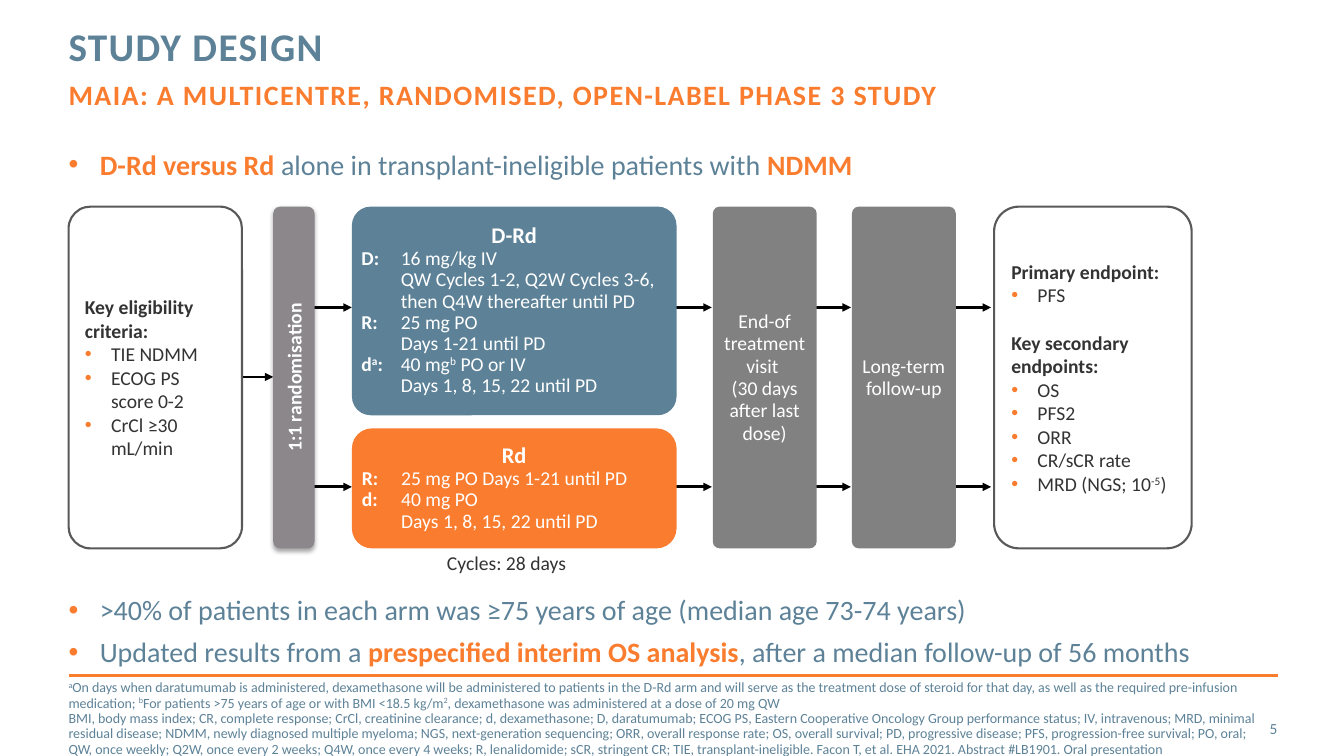
from copy import deepcopy
from lxml.etree import SubElement
from pptx import Presentation
from pptx.dml.color import RGBColor
from pptx.enum.shapes import MSO_CONNECTOR, MSO_SHAPE
from pptx.enum.text import MSO_ANCHOR, PP_ALIGN
from pptx.oxml.ns import qn
from pptx.util import Inches, Pt

ORANGE = RGBColor(0xFA, 0x7C, 0x2E)
BLUE = RGBColor(0x5D, 0x82, 0x98)
GREY = RGBColor(0x81, 0x81, 0x81)
MAUVE = RGBColor(0x8B, 0x87, 0x8B)
EDGE = RGBColor(0x59, 0x59, 0x59)
INK = RGBColor(0x34, 0x33, 0x33)
WHITE = RGBColor(0xFF, 0xFF, 0xFF)
BLACK = RGBColor(0, 0, 0)

LEFT = 0.68
TOP, HIGH = 2.05, 3.39
ARMS = (3.05, 4.83)
CENTER = PP_ALIGN.CENTER


def add_para(frame, runs, size, color, align=None, lead=None, before=0,
             hang=0, bullet=False, track=0):
    para = frame.paragraphs[0]
    if para.runs:
        para = frame.add_paragraph()
    props = para._p.get_or_add_pPr()
    if hang:
        props.set("marL", str(Inches(hang)))
        props.set("indent", str(-Inches(hang)))
    if bullet:
        tint = SubElement(props, qn("a:buClr"))
        SubElement(tint, qn("a:srgbClr")).set("val", str(ORANGE))
        SubElement(props, qn("a:buFont")).set("typeface", "Arial")
        SubElement(props, qn("a:buChar")).set("char", "•")
    para.alignment = align
    para.line_spacing = lead
    para.space_before = Pt(before)
    for text, marks in [(runs, "")] if isinstance(runs, str) else runs:
        for index, line in enumerate(text.split("\n")):
            if index:
                para.add_line_break()
                para._p[-1].insert(0, deepcopy(run._r.rPr))
            run = para.add_run()
            run.text = line
            run.font.name = "Calibri"
            run.font.size = Pt(size)
            run.font.bold = "b" in marks
            run.font.color.rgb = ORANGE if "o" in marks else color
            if "s" in marks:
                run._r.get_or_add_rPr().set("baseline", "30000")
            if track:
                run._r.get_or_add_rPr().set("spc", str(track))


def set_frame(shape, side=0, ends=0, anchor=MSO_ANCHOR.MIDDLE):
    frame = shape.text_frame
    frame.word_wrap = True
    frame.vertical_anchor = anchor
    frame.margin_left = frame.margin_right = Inches(side)
    frame.margin_top = frame.margin_bottom = Inches(ends)
    return frame


def add_label(slide, x, y, w, h, anchor=MSO_ANCHOR.TOP):
    box = slide.shapes.add_textbox(Inches(x), Inches(y), Inches(w), Inches(h))
    return set_frame(box, anchor=anchor)


def add_box(slide, x, y, w, h, fill, curve, edge=None):
    box = slide.shapes.add_shape(MSO_SHAPE.ROUNDED_RECTANGLE, Inches(x),
                                 Inches(y), Inches(w), Inches(h))
    box.adjustments[0] = curve
    box.shadow.inherit = False
    box.fill.solid()
    box.fill.fore_color.rgb = fill
    if edge:
        box.line.color.rgb = edge
        box.line.width = Pt(1.5)
    else:
        box.line.fill.background()
    return box


def add_line(slide, x, y, length, color, arrow=False):
    line = slide.shapes.add_connector(MSO_CONNECTOR.STRAIGHT, Inches(x),
                                      Inches(y), Inches(x + length), Inches(y))
    line.line.color.rgb = color
    line.line.width = Pt(2)
    if arrow:
        SubElement(line.line._ln, qn("a:tailEnd")).set("type", "triangle")
    SubElement(line._element.spPr, qn("a:effectLst"))


def add_header(slide, x, y, w):
    frame = add_label(slide, x, y, w, 0.45)
    add_para(frame, [("STUDY DESIGN", "b")], 28, BLUE, lead=Pt(30), track=100)
    frame = add_label(slide, x, y + 0.5, w, 0.4)
    add_para(frame, [("MAIA: A MULTICENTRE, RANDOMISED, OPEN-LABEL PHASE 3 STUDY", "b")],
             20, ORANGE, track=100)


def add_points(slide, x, y, w, points):
    frame = add_label(slide, x, y, w, 0.36 * len(points))
    for index, runs in enumerate(points):
        add_para(frame, runs, 20, BLUE, before=6 * (index > 0), hang=0.31,
                 bullet=True)


def add_list(slide, x, y, w, h, groups):
    box = add_box(slide, x, y, w, h, WHITE, 0.126, EDGE)
    frame = set_frame(box, 0.1, 0.13)
    for index, (head, items) in enumerate(groups):
        add_para(frame, [(head, "b")], 14, INK, before=17 * (index > 0))
        for item in items:
            add_para(frame, item, 14, INK, hang=0.26, bullet=True)


def add_arm(slide, x, y, w, h, fill, curve, name, doses):
    frame = set_frame(add_box(slide, x, y, w, h, fill, curve), 0.04, 0.04)
    add_para(frame, [(name, "b")], 16, WHITE, CENTER, 0.9)
    for runs in doses:
        add_para(frame, runs, 14, WHITE, lead=0.9, hang=0.39)


def add_stage(slide, x, y, w, h, text):
    frame = set_frame(add_box(slide, x, y, w, h, GREY, 0.066), 0.05)
    add_para(frame, text, 14, WHITE, CENTER, 0.95)


def add_split(slide, x, y, w, h):
    bar = add_box(slide, x + (w - h) / 2, y + (h - w) / 2, h, w, MAUVE, 0.167)
    bar.rotation = 270
    glow = SubElement(bar._element.spPr.find(qn("a:effectLst")),
                      qn("a:outerShdw"), blurRad=str(Pt(3.1)),
                      dist=str(Pt(1.8)), dir="5400000", rotWithShape="0")
    tint = SubElement(glow, qn("a:srgbClr"), val=str(BLACK))
    SubElement(tint, qn("a:alpha"), val="35000")
    frame = set_frame(bar, 0.1, 0.05)
    add_para(frame, [("1:1 randomisation", "b")], 14, WHITE, CENTER)


def add_flow(slide, y, h):
    add_line(slide, 2.32, 3.74, 0.39, BLACK, True)
    for x in (3.09, 6.66, 8.04, 9.43):
        for level in ARMS:
            add_line(slide, x, level, 0.4, BLACK, True)
    add_list(slide, LEFT, y, 1.72, h, [
        ("Key eligibility criteria:",
         ["TIE NDMM", "ECOG PS score 0-2", "CrCl ≥30 mL/min"])])
    add_split(slide, 2.71, y, 0.41, h)
    add_arm(slide, 3.49, y, 3.22, 2.07, BLUE, 0.09, "D-Rd", [
        [("D: \t", "b"), ("16 mg/kg IV\nQW Cycles 1-2, Q2W Cycles 3-6,\n"
                          "then Q4W thereafter until PD", "")],
        [("R: \t", "b"), ("25 mg PO\nDays 1-21 until PD", "")],
        [("d", "b"), ("a", "bs"), (":", "b"), ("\t40 mg", ""), ("b", "s"),
         (" PO or IV\nDays 1, 8, 15, 22 until PD", "")]])
    add_arm(slide, 3.49, y + 2.2, 3.22, 1.19, ORANGE, 0.167, "Rd", [
        [("R: \t", "b"), ("25 mg PO Days 1-21 until PD", "")],
        [("d: \t", "b"), ("40 mg PO\nDays 1, 8, 15, 22 until PD", "")]])
    add_stage(slide, 7.07, y, 1.03, h,
              "End-of treatment visit \n(30 days after last dose)")
    add_stage(slide, 8.45, y, 1.03, h, "Long-term follow-up")
    add_list(slide, 9.86, y, 1.96, h, [
        ("Primary endpoint:", ["PFS"]),
        ("Key secondary endpoints:",
         ["OS", "PFS2", "ORR", "CR/sCR rate",
          [("MRD (NGS; 10", ""), ("-5", "s"), (")", "")]])])
    frame = add_label(slide, 4.41, y + h + 0.04, 1.23, 0.22)
    add_para(frame, "Cycles: 28 days", 14, INK, CENTER, 0.95)


def add_footer(slide, x, y, w):
    add_line(slide, x, y, w, ORANGE)
    frame = add_label(slide, x, y + 0.23, 11.84, 0.4, MSO_ANCHOR.MIDDLE)
    add_para(frame, [
        ("a", "s"),
        ("On days when daratumumab is administered, dexamethasone will be administered to patients in the D-Rd arm and will serve as the treatment dose of steroid for that day, as well as the required pre-infusion medication; ", ""),
        ("b", "s"),
        ("For patients >75 years of age or with BMI <18.5 kg/m", ""), ("2", "s"),
        (", dexamethasone was administered at a dose of 20 mg QW", "")],
        10, BLUE, lead=Pt(11))
    add_para(frame, "BMI, body mass index; CR, complete response; CrCl, creatinine clearance; d, dexamethasone; D, daratumumab; ECOG PS, Eastern Cooperative Oncology Group performance status; IV, intravenous; MRD, minimal residual disease; NDMM, newly diagnosed multiple myeloma; NGS, next-generation sequencing; ORR, overall response rate; OS, overall survival; PD, progressive disease; PFS, progression-free survival; PO, oral; QW, once weekly; Q2W, once every 2 weeks; Q4W, once every 4 weeks; R, lenalidomide; sCR, stringent CR; TIE, transplant-ineligible. Facon T, et al. EHA 2021. Abstract #LB1901. Oral presentation",
             10, BLUE, lead=Pt(11))
    frame = add_label(slide, x + w - 0.87, y + 0.33, 0.86, 0.4, MSO_ANCHOR.MIDDLE)
    add_para(frame, "5", 11, BLUE, PP_ALIGN.RIGHT)


def main():
    deck = Presentation()
    deck.slide_width, deck.slide_height = Inches(13.33), Inches(7.5)
    slide = deck.slides.add_slide(deck.slide_layouts[6])
    add_header(slide, LEFT, 0.27, 12)
    add_points(slide, LEFT, 1.46, 12, [
        [("D-Rd versus Rd ", "bo"),
         ("alone in transplant-ineligible patients with ", ""), ("NDMM", "bo")]])
    add_flow(slide, TOP, HIGH)
    add_points(slide, LEFT, 5.88, 12, [
        ">40% of patients in each arm was ≥75 years of age (median age 73-74 years)",
        [("Updated results from a ", ""), ("prespecified interim OS analysis", "bo"),
         (", after a median follow-up of 56 months", "")]])
    add_footer(slide, LEFT, 6.7, 12)
    deck.save("out.pptx")


if __name__ == "__main__":
    main()
